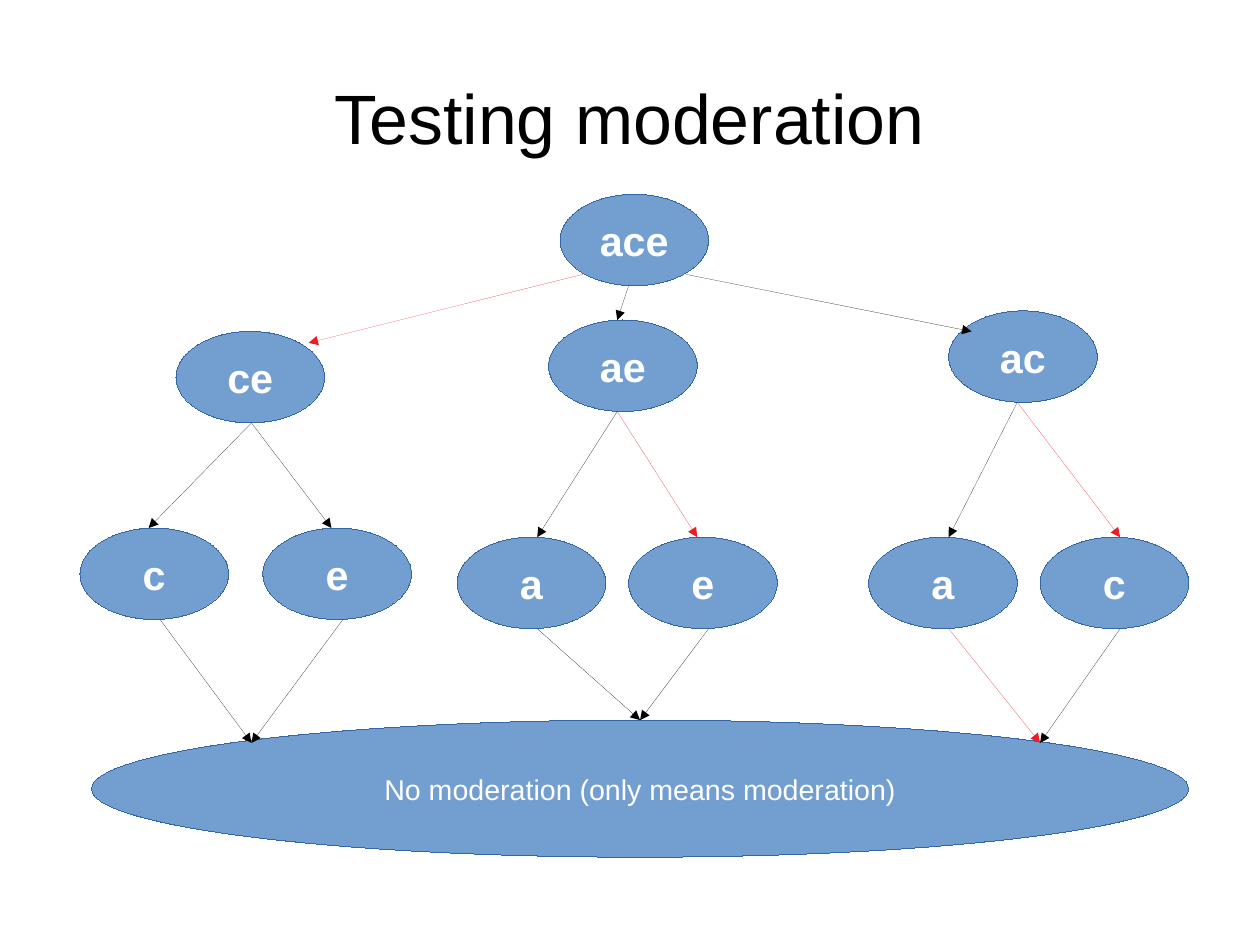
from lxml import etree
from pptx import Presentation, util as u
from pptx.dml.color import RGBColor
from pptx.enum import shapes, text
from pptx.oxml.ns import qn

COLORS = {"node": "729FCF", "outline": "3465A4", "label": "FFFFFF",
          "title": "000000", "plain": "000000", "chosen": "ED1C24"}
SLIDE_W, SLIDE_H = u.Cm(28), u.Cm(21)
NODE_W, NODE_H = 1.3, 0.8

# Leaves: label, left, arrow x in, arrow x out, style in, style out
BRANCHES = [
    {"label": "ce", "at": (1.54, 2.9), "hub": 2.2, "leaf_top": 4.62, "sink": (2.2, 6.5),
     "leaves": [("c", 0.7, 1.3, 1.4, "plain", "plain"),
                ("e", 2.3, 2.9, 3.0, "plain", "plain")]},
    {"label": "ae", "at": (4.8, 2.8), "hub": 5.4, "leaf_top": 4.7, "sink": (5.6, 6.3),
     "leaves": [("a", 4.0, 4.7, 4.7, "plain", "plain"),
                ("e", 5.5, 6.1, 6.2, "chosen", "plain")]},
    {"label": "ac", "at": (8.3, 2.72), "hub": 8.9, "leaf_top": 4.7, "sink": (9.1, 6.5),
     "leaves": [("a", 7.6, 8.3, 8.3, "plain", "chosen"),
                ("c", 9.1, 9.8, 9.8, "chosen", "plain")]},
]
ROOT_ARROWS = [((5.5, 2.5), (5.4, 2.8), "plain"),
               ((5.1, 2.4), (2.7, 3.0), "chosen"),
               ((6.0, 2.4), (8.5, 2.9), "plain")]


def color(name):
    return RGBColor.from_string(COLORS[name])


def draw_hairline(shape, ink):
    """Give the shape a thin line that takes no width from the theme."""
    element = shape._element
    element.remove(element.find(qn("p:style")))
    shape.line.color.rgb = color(ink)


def write(shape, words, size, ink, bold=False):
    frame = shape.text_frame
    frame.vertical_anchor = text.MSO_ANCHOR.MIDDLE
    para = frame.paragraphs[0]
    para.alignment = text.PP_ALIGN.CENTER
    span = para.add_run()
    span.text = words
    span.font.name = "Arial"
    span.font.size = u.Pt(size)
    span.font.bold = bold
    span.font.color.rgb = color(ink)
    return frame


def add_title(page, words, box):
    frame = write(page.shapes.add_textbox(*box), words, 44, "title")
    frame.word_wrap = True
    frame.margin_left = frame.margin_right = frame.margin_top = frame.margin_bottom = 0


def add_ellipse(page, words, box, size=26, bold=True):
    ellipse = page.shapes.add_shape(shapes.MSO_SHAPE.OVAL, *map(u.Inches, box))
    ellipse.shadow.inherit = False
    ellipse.fill.solid()
    ellipse.fill.fore_color.rgb = color("node")
    draw_hairline(ellipse, "outline")
    write(ellipse, words, size, "label", bold).word_wrap = False


def add_arrow(page, start, end, style):
    arrow = page.shapes.add_connector(shapes.MSO_CONNECTOR.STRAIGHT,
                                      *map(u.Inches, (*start, *end)))
    draw_hairline(arrow, style)
    outline = arrow.line._get_or_add_ln()
    etree.SubElement(outline, qn("a:tailEnd"), type="triangle")
    etree.SubElement(arrow._element.spPr, qn("a:effectLst"))


def add_branch(page, branch):
    """Draw a two-letter model, its one-letter models and the arrows to the sink."""
    left, top = branch["at"]
    leaf_top = branch["leaf_top"]
    add_ellipse(page, branch["label"], (left, top, NODE_W, NODE_H))
    for label, leaf_left, x_in, x_out, style_in, style_out in branch["leaves"]:
        add_ellipse(page, label, (leaf_left, leaf_top, NODE_W, NODE_H))
        add_arrow(page, (branch["hub"], top + NODE_H), (x_in, leaf_top), style_in)
        add_arrow(page, (x_out, leaf_top + NODE_H), branch["sink"], style_out)


def add_model_tree(page):
    add_ellipse(page, "ace", (4.9, 1.7, NODE_W, NODE_H))
    add_ellipse(page, "No moderation (only means moderation)",
                (0.8, 6.3, 9.6, 1.2), size=18, bold=False)
    for branch in BRANCHES:
        add_branch(page, branch)
    for start, end, style in ROOT_ARROWS:
        add_arrow(page, start, end, style)


def main():
    deck = Presentation()
    deck.slide_width, deck.slide_height = SLIDE_W, SLIDE_H
    page = deck.slides.add_slide(deck.slide_layouts[6])
    add_title(page, "Testing moderation",
              (int(SLIDE_W * 0.05), int(SLIDE_H * 0.04),
               int(SLIDE_W * 0.9), SLIDE_H // 6))
    add_model_tree(page)
    deck.save("out.pptx")


if __name__ == "__main__":
    main()
